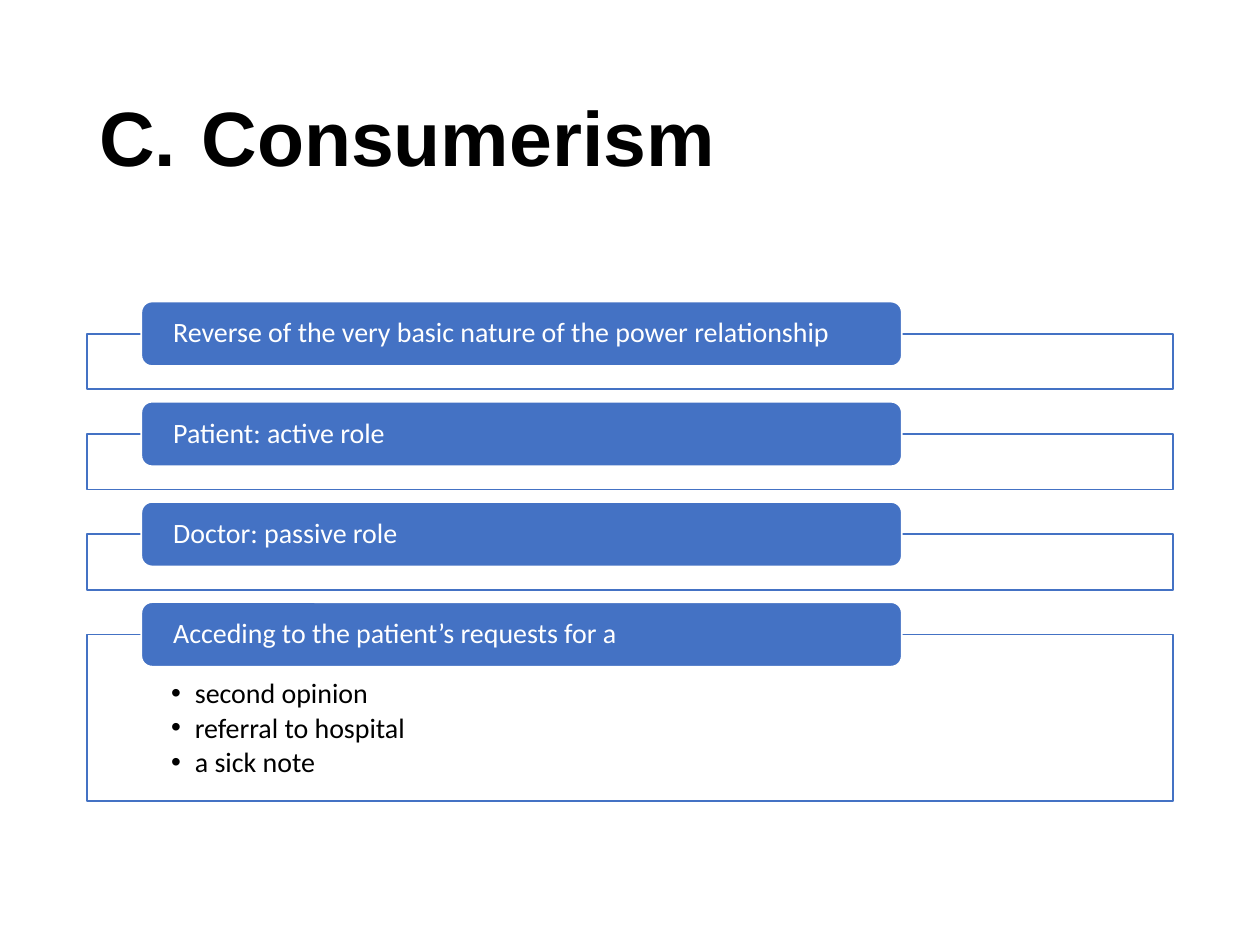
from pptx import Presentation
from pptx.dml.color import RGBColor
from pptx.enum.shapes import MSO_SHAPE as Shape
from pptx.enum.text import MSO_ANCHOR as Anchor, PP_ALIGN as Align
from pptx.oxml.xmlchemy import OxmlElement
from pptx.util import Cm, Pt


def color(hex_code):
    return RGBColor.from_string(hex_code)


def add_bullet(para, indent, tag, **attributes):
    """Give the paragraph a hanging indent and a bullet or number."""
    props = para._p.get_or_add_pPr()
    props.set("marL", str(indent))
    props.set("indent", str(-indent))
    bullet_font = OxmlElement("a:buFont")
    bullet_font.set("typeface", "Arial")
    bullet = OxmlElement(tag)
    for name, value in attributes.items():
        bullet.set(name, value)
    props.extend([bullet_font, bullet])


BLUE, WHITE, BLACK = "4472C4", "FFFFFF", "000000"
HEADINGS = [
    "Reverse of the very basic nature of the power relationship",
    "Patient: active role",
    "Doctor: passive role",
    "Acceding to the patient’s requests for a",
]
REQUESTS = ["second opinion", "referral to hospital", "a sick note"]

deck = Presentation()
deck.slide_width, deck.slide_height = Cm(25.4), Cm(19.05)
page = deck.slides.add_slide(deck.slide_layouts[5])

# Title, numbered from C
title = page.shapes.title
title.left, title.top, title.width, title.height = Cm(1.75), Cm(1.01), Cm(21.9), Cm(3.68)
title.text_frame.vertical_anchor = Anchor.MIDDLE
para = title.text_frame.paragraphs[0]
para.text = "Consumerism"
add_bullet(para, Cm(2.06), "a:buAutoNum", type="alphaUcPeriod", startAt="3")
para.alignment = Align.LEFT
para.line_spacing = 0.9
para.font.name, para.font.size, para.font.bold = "Arial", Pt(44), True
para.font.color.rgb = color(BLACK)

# One outlined frame with a heading pill per row; the last frame holds the list
for row, heading in enumerate(HEADINGS):
    top = 6.73 + 2.02 * row
    is_last = row == len(HEADINGS) - 1
    frame = page.shapes.add_shape(
        Shape.RECTANGLE, Cm(1.75), Cm(top), Cm(21.9), Cm(3.36 if is_last else 1.12))
    pill = page.shapes.add_shape(
        Shape.ROUNDED_RECTANGLE, Cm(2.85), Cm(top - 0.65), Cm(15.33), Cm(1.3))

    for box, fill, line in ((frame, WHITE, BLUE), (pill, BLUE, WHITE)):
        box.shadow.inherit = False
        box.fill.solid()
        box.fill.fore_color.rgb = color(fill)
        box.line.color.rgb = color(line)
        box.line.width = Pt(1)

    text = pill.text_frame
    text.margin_left = text.margin_right = Cm(0.58)
    text.margin_top = text.margin_bottom = 0
    text.vertical_anchor = Anchor.MIDDLE
    para = text.paragraphs[0]
    para.text = heading
    para.alignment = Align.LEFT
    para.line_spacing = 0.9
    para.font.name, para.font.size = "Calibri", Pt(16)
    para.font.color.rgb = color(WHITE)

# Bulleted requests in the last frame
text = frame.text_frame
text.margin_left = text.margin_right = Cm(1.7)
text.margin_top, text.margin_bottom = Cm(0.91), Cm(0.3)
text.vertical_anchor = Anchor.TOP
for number, request in enumerate(REQUESTS):
    para = text.add_paragraph() if number else text.paragraphs[0]
    para.text = request
    add_bullet(para, Cm(0.48), "a:buChar", char="•")
    para.alignment = Align.LEFT
    para.line_spacing = 0.9
    para.space_after = Pt(2.4)
    para.font.name, para.font.size = "Calibri", Pt(16)
    para.font.color.rgb = color(BLACK)

deck.save("out.pptx")
